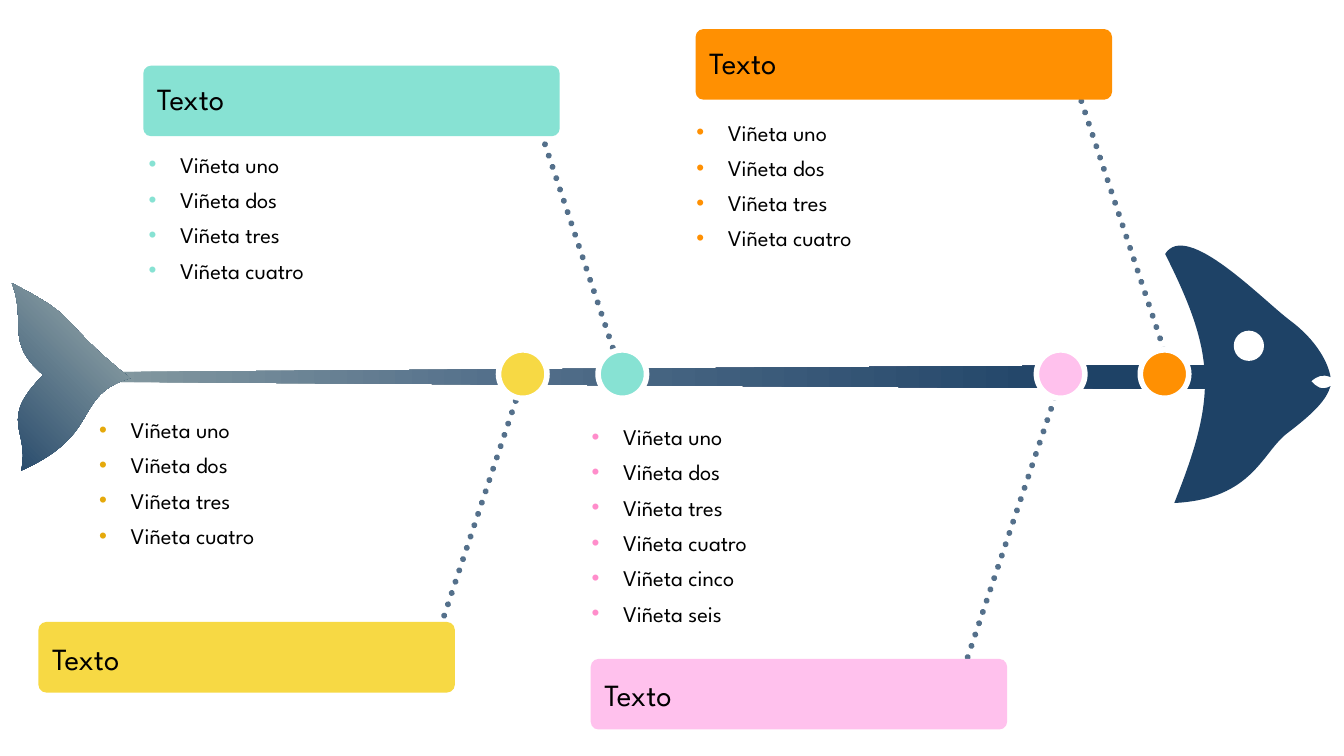
import math
from dataclasses import dataclass

from lxml import etree
from pptx import Presentation
from pptx import util as u
from pptx.dml.color import RGBColor
from pptx.enum import dml, shapes, text
from pptx.oxml import ns

FONT = "League Spartan"
BLACK = RGBColor(0x00, 0x00, 0x00)
WHITE = RGBColor(0xFF, 0xFF, 0xFF)
NAVY = RGBColor(0x1E, 0x42, 0x66)
SLATE = RGBColor(0x54, 0x70, 0x8B)
MIST = RGBColor(0x84, 0x99, 0xA0)
MINT = RGBColor(0x87, 0xE2, 0xD3)
YELLOW = RGBColor(0xF7, 0xD9, 0x44)
AMBER = RGBColor(0xE5, 0xA9, 0x0B)
ORANGE = RGBColor(0xFF, 0x90, 0x02)
PINK = RGBColor(0xFF, 0xC1, 0xED)
ROSE = RGBColor(0xFF, 0x8D, 0xCB)

BAR_WIDTH, BAR_HEIGHT = 297.4, 50.4
DOT_SIZE, DOT_TOP = 34.6, 249.9
ITEMS = ["Viñeta " + number for number in
         ("uno", "dos", "tres", "cuatro", "cinco", "seis")]

# Outlines in points: the start, then lines (one point) or curves (three points).
SPINE = [
    [(72.7, 269.3)],
    [(73.4, 267.8), (80.6, 265.7), (85.7, 265.7)],
    [(863.3, 260.6)],
    [(868.3, 260.6), (871.9, 265), (871.9, 269.3)],
    [(871.9, 274.3), (868.3, 277.9), (863.3, 277.9)],
    [(82.8, 272.9)],
    [(77.8, 272.9), (72.7, 270.7), (72.7, 269.3)],
]
HEAD = [
    [(936.7, 272.2)],
    [(939.6, 275.8), (943.9, 279.4), (950.4, 275.8)],
    [(947.5, 285.8), (938.2, 295.2), (920.2, 308.9)],
    [(901.4, 322.6), (895.7, 356.4), (838.8, 359.3)],
    [(869, 283.7), (869, 254.2), (832.3, 181.4)],
    [(847.4, 157), (901.4, 213.8), (921.6, 229)],
    [(941, 243.4), (949, 259.9), (950.4, 269.3)],
    [(944.6, 267.1), (941, 268.6), (936.7, 272.2)],
]
TAIL = [
    [(92.9, 270)],
    [(51.1, 283), (74.2, 309.6), (15.1, 336.2)],
    [(21.6, 306), (-2.2, 301), (31, 267.8)],
    [(2.9, 244.1), (19.4, 231.1), (8.6, 202.3)],
    [(60.5, 229), (38.2, 226.1), (92.9, 270)],
]


@dataclass
class Branch:
    fill: RGBColor
    bullet: RGBColor
    bar: tuple
    title_drop: float
    bone: tuple
    dot_left: float
    notes: tuple
    count: int = 4


BRANCHES = [
    Branch(MINT, MINT, (102.4, 46.9), 10, (386.6, 95, 444.2, 267.8), 427.2,
           (99.1, 104.2)),
    Branch(YELLOW, AMBER, (27.5, 444.3), 12.2, (314.6, 447.8, 372.2, 275),
           356.1, (63.8, 293.8)),
    Branch(ORANGE, ORANGE, (496.9, 20.8), 10, (769.7, 64.1, 835.2, 261.4),
           814.5, (490.3, 81.2)),
    Branch(PINK, ROSE, (422, 470.7), 12.2, (691.2, 469.4, 755.3, 278.6),
           740.3, (415.5, 298.8), count=6),
]


def add_element(parent, tag, **attributes):
    return etree.SubElement(parent, ns.qn(tag), attributes)


def add_preset(page, kind, left, top, width, height, fill):
    shape = page.shapes.add_shape(
        kind, u.Pt(left), u.Pt(top), u.Pt(width), u.Pt(height))
    shape.shadow.inherit = False
    shape.fill.solid()
    shape.fill.fore_color.rgb = fill
    shape.line.fill.background()
    return shape


def turn(point, degrees):
    """Turn a point clockwise about the page's top left corner."""
    x, y = point
    cos, sin = math.cos(math.radians(degrees)), math.sin(math.radians(degrees))
    return round(x * cos - y * sin), round(x * sin + y * cos)


def add_outline(page, outline, rotation=0):
    """Add a closed outline whose frame is rotated by the given degrees."""
    segments = [[turn((u.Pt(x), u.Pt(y)), -rotation) for x, y in points]
                for points in outline]
    builder = page.shapes.build_freeform(*segments[0][0])
    builder.add_line_segments([points[-1] for points in segments[1:]])
    shape = builder.convert_to_shape()
    left, top = shape.left, shape.top
    steps = shape.element.spPr.findall(".//" + ns.qn("a:lnTo"))
    for step, points in zip(steps, segments[1:]):
        if len(points) == 3:
            curve = etree.Element(ns.qn("a:cubicBezTo"))
            for x, y in points:
                add_element(curve, "a:pt", x=str(x - left), y=str(y - top))
            step.getparent().replace(step, curve)
    center_x, center_y = turn(
        (left + shape.width / 2, top + shape.height / 2), rotation)
    shape.left = u.Emu(center_x - shape.width // 2)
    shape.top = u.Emu(center_y - shape.height // 2)
    shape.rotation = rotation
    shape.shadow.inherit = False
    shape.line.fill.background()
    shape.fill.solid()
    shape.fill.fore_color.rgb = NAVY
    return shape


def set_gradient(shape, stops, angle):
    """Fill with (percent, colour) stops; the angle runs counterclockwise."""
    shape.fill.gradient()
    shape.fill.gradient_angle = angle
    stop_list = shape.element.spPr.find(".//" + ns.qn("a:gsLst"))
    for stop in list(stop_list):
        stop_list.remove(stop)
    for percent, colour in stops:
        stop = add_element(stop_list, "a:gs", pos=str(percent * 1000))
        add_element(stop, "a:srgbClr", val=str(colour))


def add_bone(page, branch):
    bone = page.shapes.add_connector(
        shapes.MSO_CONNECTOR.STRAIGHT, *(u.Pt(value) for value in branch.bone))
    bone.line.color.rgb = SLATE
    bone.line.width = u.Pt(4.25)
    bone.line.dash_style = dml.MSO_LINE.ROUND_DOT
    properties = bone.element.spPr
    properties.find(ns.qn("a:ln")).set("cap", "rnd")
    add_element(properties, "a:effectLst")


def add_text_frame(page, left, top, width, height):
    box = page.shapes.add_textbox(
        u.Pt(left), u.Pt(top), u.Pt(width), u.Pt(height))
    frame = box.text_frame
    frame.word_wrap = True
    frame.auto_size = text.MSO_AUTO_SIZE.SHAPE_TO_FIT_TEXT
    return frame


def set_font(para, size):
    para.font.name = FONT
    para.font.size = u.Pt(size)
    para.font.color.rgb = BLACK


def add_bar(page, branch):
    bar = add_preset(page, shapes.MSO_SHAPE.ROUNDED_RECTANGLE, *branch.bar,
                     BAR_WIDTH, BAR_HEIGHT, branch.fill)
    bar.adjustments[0] = 0.11
    left, top = branch.bar
    frame = add_text_frame(page, left + 9.7, top + branch.title_drop, 283.7, 26.6)
    frame.vertical_anchor = text.MSO_ANCHOR.MIDDLE
    frame.margin_left = frame.margin_right = 0
    frame.margin_top = frame.margin_bottom = 0
    frame.text = "Texto"
    set_font(frame.paragraphs[0], 22)


def add_dot(page, branch):
    dot = add_preset(page, shapes.MSO_SHAPE.OVAL, branch.dot_left, DOT_TOP,
                     DOT_SIZE, DOT_SIZE, branch.fill)
    dot.line.color.rgb = WHITE
    dot.line.width = u.Pt(4)


def add_notes(page, branch):
    frame = add_text_frame(page, *branch.notes, 302.4, 25.7 * branch.count)
    for index, item in enumerate(ITEMS[:branch.count]):
        para = frame.add_paragraph() if index else frame.paragraphs[0]
        para.text = item
        para.space_after = u.Pt(6)
        properties = para._p.get_or_add_pPr()
        properties.set("marL", str(u.Pt(22.5)))
        properties.set("indent", str(u.Pt(-22.5)))
        colour = add_element(properties, "a:buClr")
        add_element(colour, "a:srgbClr", val=str(branch.bullet))
        add_element(properties, "a:buFont", typeface="Arial")
        add_element(properties, "a:buChar", char="•")
        set_font(para, 16)


def add_fish(page):
    spine = add_outline(page, SPINE)
    set_gradient(spine, [(0, MIST), (35, SLATE), (89, NAVY)], 0)
    add_outline(page, HEAD, 225)
    add_preset(page, shapes.MSO_SHAPE.OVAL, 881.3, 236.2, 21.6, 21.6, WHITE)
    tail = add_outline(page, TAIL, 225)
    set_gradient(tail, [(18, NAVY), (79, MIST)], 270)


def main():
    deck = Presentation()
    deck.slide_width, deck.slide_height = u.Pt(960), u.Pt(540)
    page = deck.slides.add_slide(deck.slide_layouts[6])
    for branch in BRANCHES:
        add_bone(page, branch)
    add_fish(page)
    for add_part in (add_bar, add_dot, add_notes):
        for branch in BRANCHES:
            add_part(page, branch)
    deck.save("out.pptx")


if __name__ == "__main__":
    main()
